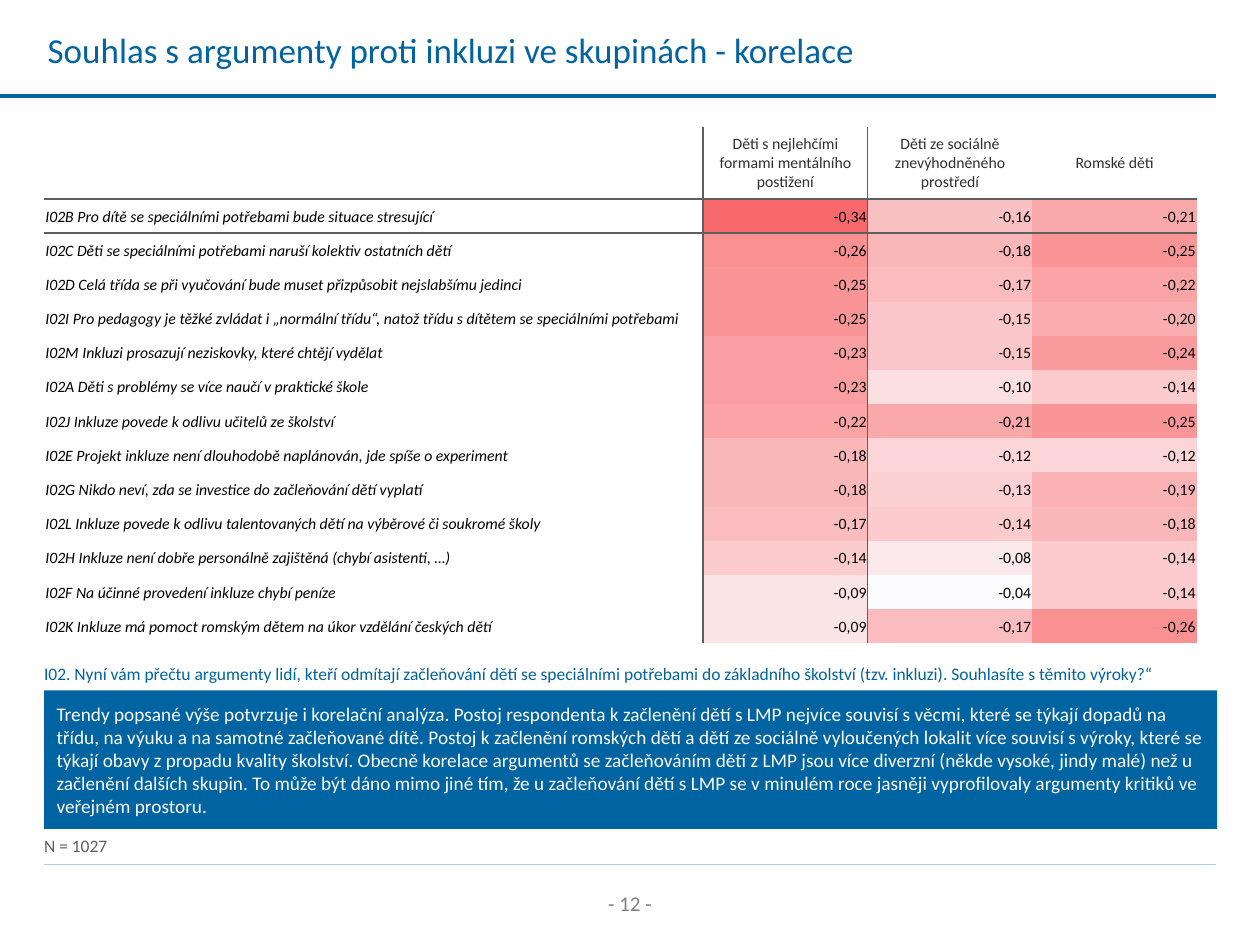
from lxml.etree import SubElement
from pptx import Presentation
from pptx.dml.color import RGBColor
from pptx.enum.shapes import MSO_CONNECTOR, MSO_SHAPE
from pptx.enum.text import MSO_ANCHOR, PP_ALIGN
from pptx.oxml.ns import qn
from pptx.util import Inches, Pt

BLUE = "0063A2"
GREY = "5F5F5F"
WHITE = "FFFFFF"
LOW, HIGH = -0.34, -0.04
NO_STYLE = "{2D5ABB26-0587-4C30-8999-92F81FD0307C}"

TITLE = "Souhlas s argumenty proti inkluzi ve skupinách - korelace"
QUERY = (
    "I02. Nyní vám přečtu argumenty lidí, kteří odmítají začleňování dětí se speciálními "
    "potřebami do základního školství (tzv. inkluzi). Souhlasíte s těmito výroky?“"
)
NOTE = (
    "Trendy popsané výše potvrzuje i korelační analýza. Postoj respondenta k začlenění dětí "
    "s LMP nejvíce souvisí s věcmi, které se týkají dopadů na třídu, na výuku a na samotné "
    "začleňované dítě. Postoj k začlenění romských dětí a dětí ze sociálně vyloučených lokalit "
    "více souvisí s výroky, které se týkají obavy z propadu kvality školství. Obecně korelace "
    "argumentů se začleňováním dětí z LMP jsou více diverzní (někde vysoké, jindy malé) než u "
    "začlenění dalších skupin. To může být dáno mimo jiné tím, že u začleňování dětí s LMP se "
    "v minulém roce jasněji vyprofilovaly argumenty kritiků ve veřejném prostoru."
)
HEADS = [
    "",
    "Děti s nejlehčími formami mentálního postižení",
    "Děti ze sociálně znevýhodněného prostředí",
    "Romské děti",
]
ROWS = [
    ("I02B Pro dítě se speciálními potřebami bude situace stresující", -0.34, -0.16, -0.21),
    ("I02C Děti se speciálními potřebami naruší kolektiv ostatních dětí", -0.26, -0.18, -0.25),
    ("I02D Celá třída se při vyučování bude muset přizpůsobit nejslabšímu jedinci", -0.25, -0.17, -0.22),
    ("I02I Pro pedagogy je těžké zvládat i „normální třídu“, natož třídu s dítětem se speciálními potřebami",
     -0.25, -0.15, -0.20),
    ("I02M Inkluzi prosazují neziskovky, které chtějí vydělat", -0.23, -0.15, -0.24),
    ("I02A Děti s problémy se více naučí v praktické škole", -0.23, -0.10, -0.14),
    ("I02J Inkluze povede k odlivu učitelů ze školství", -0.22, -0.21, -0.25),
    ("I02E Projekt inkluze není dlouhodobě naplánován, jde spíše o experiment", -0.18, -0.12, -0.12),
    ("I02G Nikdo neví, zda se investice do začleňování dětí vyplatí", -0.18, -0.13, -0.19),
    ("I02L Inkluze povede k odlivu talentovaných dětí na výběrové či soukromé školy", -0.17, -0.14, -0.18),
    ("I02H Inkluze není dobře personálně zajištěná (chybí asistenti, …)", -0.14, -0.08, -0.14),
    ("I02F Na účinné provedení inkluze chybí peníze", -0.09, -0.04, -0.14),
    ("I02K Inkluze má pomoct romským dětem na úkor vzdělání českých dětí", -0.09, -0.17, -0.26),
]


def color(code):
    return RGBColor.from_string(code)


def write(frame, text, size=10, tint=GREY, align=PP_ALIGN.LEFT, italic=False):
    para = frame.paragraphs[0]
    para.alignment = align
    run = para.add_run()
    run.text = text
    font = run.font
    font.name = "Calibri"
    font.size = Pt(size)
    font.italic = italic
    font.color.rgb = color(tint)


def add_text(slide, box, text, left=0.1, anchor=MSO_ANCHOR.TOP, **look):
    frame = slide.shapes.add_textbox(*map(Inches, box)).text_frame
    frame.word_wrap = True
    frame.margin_left = Inches(left)
    frame.vertical_anchor = anchor
    write(frame, text, **look)


def add_rule(slide, left, top, right, tint, width):
    ends = map(Inches, (left, top, right, top))
    line = slide.shapes.add_connector(MSO_CONNECTOR.STRAIGHT, *ends)
    line.line.color.rgb = color(tint)
    line.line.width = Pt(width)
    SubElement(line.element.spPr, qn("a:effectLst"))


def add_edges(cell, sides):
    props = cell._tc.get_or_add_tcPr()
    for spot, side in enumerate(sides):
        edge = SubElement(props, qn("a:ln" + side), w=str(Pt(1)))
        fill = SubElement(edge, qn("a:solidFill"))
        SubElement(fill, qn("a:srgbClr"), val=GREY)
        props.insert(spot, edge)


def heat(value):
    part = (value - LOW) / (HIGH - LOW)
    pairs = zip((0xF8, 0x69, 0x6B), (0xFC, 0xFC, 0xFF))
    return "".join(f"{round(a + (b - a) * part):02X}" for a, b in pairs)


def fill_cell(cell, row, col, item):
    cell.vertical_anchor = MSO_ANCHOR.MIDDLE
    cell.fill.background()
    if row:
        cell.margin_left = cell.margin_right = cell.margin_top = Inches(0.01)
        cell.margin_bottom = 0
    if row and col:
        cell.fill.solid()
        cell.fill.fore_color.rgb = color(heat(item))
        text = f"{item:.2f}".replace(".", ",")
        write(cell.text_frame, text, size=9, tint="000000", align=PP_ALIGN.RIGHT)
    elif row:
        write(cell.text_frame, item, size=9, tint="000000", italic=True)
    elif item:
        write(cell.text_frame, item, size=9, tint="303030", align=PP_ALIGN.CENTER)
    sides = {0: "R", 1: "L"}.get(col, "")
    sides += {0: "B", 1: "T"}.get(row, "")
    add_edges(cell, sides)


def add_grid(slide, box, first=5.23, head=0.57):
    data = [HEADS, *ROWS]
    shape = slide.shapes.add_table(len(data), len(HEADS), *map(Inches, box))
    table = shape.table
    table.first_row = table.horz_banding = False
    next(shape.element.iter(qn("a:tableStyleId"))).text = NO_STYLE
    wide, high = box[2:]
    for col, part in enumerate(table.columns):
        part.width = Inches((wide - first) / (len(HEADS) - 1) if col else first)
    for row, part in enumerate(table.rows):
        part.height = Inches((high - head) / len(ROWS) if row else head)
        for col, item in enumerate(data[row]):
            fill_cell(table.cell(row, col), row, col, item)


def add_header(slide, box):
    left, top, wide, high = box
    add_rule(slide, 0, top + 0.76, left + wide, BLUE, 2.25)
    add_text(slide, (0.28, top, 8.92, high), TITLE, size=20, tint=BLUE, anchor=MSO_ANCHOR.MIDDLE)


def add_panel(slide, box):
    panel = slide.shapes.add_shape(MSO_SHAPE.RECTANGLE, *map(Inches, box))
    panel.shadow.inherit = False
    panel.fill.solid()
    panel.fill.fore_color.rgb = color(BLUE)
    panel.line.fill.background()
    panel.text_frame.word_wrap = True
    panel.text_frame.vertical_anchor = MSO_ANCHOR.MIDDLE
    write(panel.text_frame, NOTE, size=11, tint=WHITE)


def add_notes(slide, box):
    left, top, wide, high = box
    strip = 0.27
    add_text(slide, (left, top, wide, strip), QUERY, left=0, tint=BLUE)
    add_panel(slide, (left, top + strip, wide, high - 2 * strip))
    add_text(slide, (left, top + high - strip, 6.79, strip), "N = 1027", left=0)


def add_footer(slide, box):
    left, top, wide, high = box
    add_rule(slide, left, top, left + wide, "AFCFEA", 0.5)
    page = (left + wide / 2 - 0.63, top + 0.16, 1.26, 0.3)
    add_text(slide, page, "- 12 -", size=12, tint="808080", align=PP_ALIGN.CENTER)


def main():
    deck = Presentation()
    deck.slide_width = Inches(10)
    deck.slide_height = Inches(7.5)
    slide = deck.slides.add_slide(deck.slide_layouts[6])
    add_footer(slide, (0.35, 6.86, 9.3, 0.64))
    add_header(slide, (0, 0, 9.65, 0.79))
    add_notes(slide, (0.35, 5.21, 9.31, 1.64))
    add_grid(slide, (0.35, 1.01, 9.15, 4.1))
    deck.save("out.pptx")


if __name__ == "__main__":
    main()
